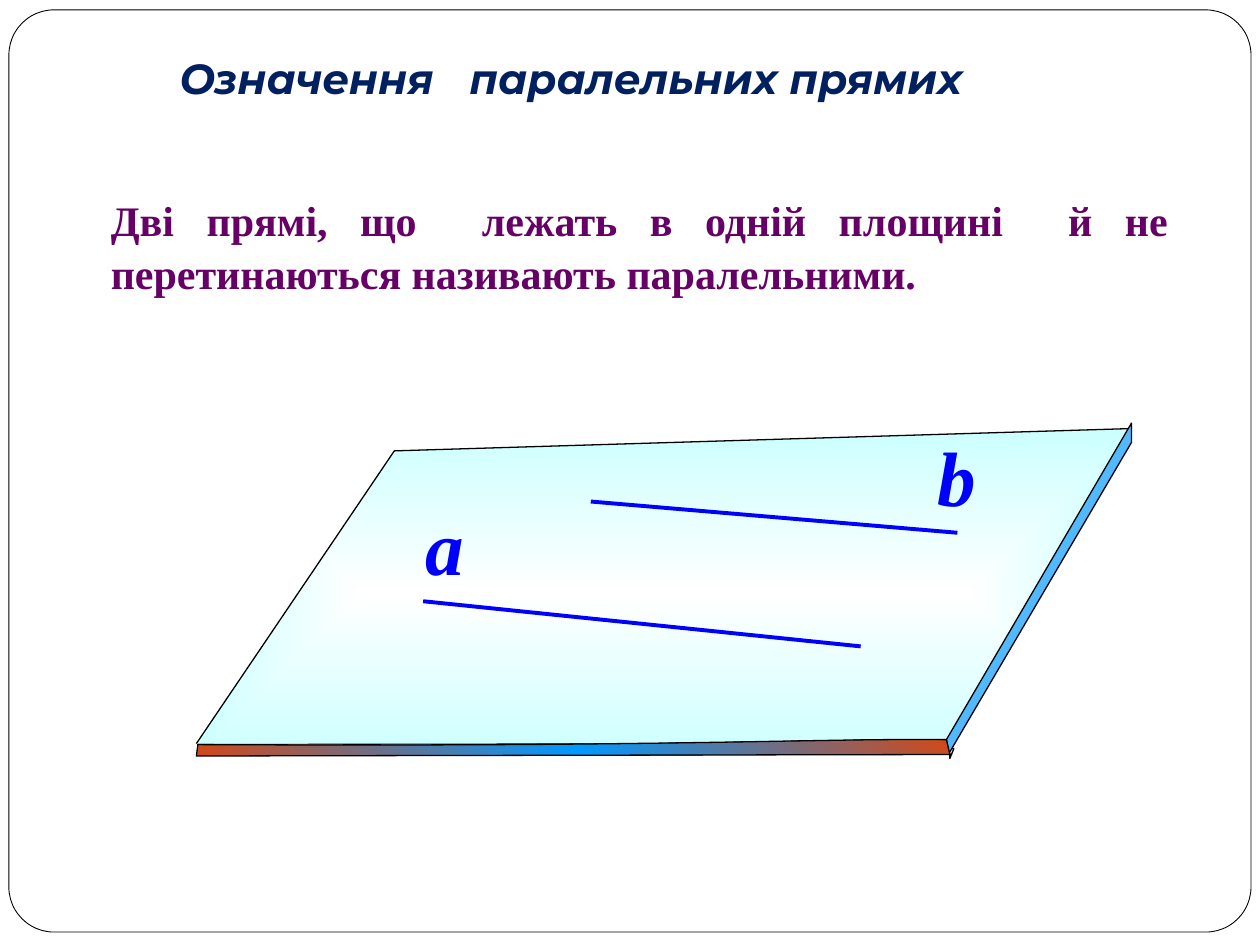
from dataclasses import dataclass

from lxml import etree
from pptx import Presentation
from pptx.dml.color import RGBColor
from pptx.enum import shapes, text
from pptx.oxml.ns import qn
from pptx.util import Cm, Pt

COLORS = {
    "white": "FFFFFF", "black": "000000", "title": "002060", "body": "660066",
    "line": "0000FF", "plane": "CCFFFF", "side": "53B9FF",
    "rust": "D34817", "azure": "0099FF",
}
Point = tuple[float, float]


@dataclass
class Style:
    font: str
    size: int
    color: str
    italic: bool = True


@dataclass
class Line:
    """A named straight line of the plane; all lengths in cm."""
    name: str
    start: Point
    end: Point
    label_box: tuple[float, float, float, float]


LINES = [
    Line("a", (17.35, 13.03), (8.53, 12.12), (8.33, 9.93, 1.32, 2.11)),
    Line("b", (19.3, 10.74), (11.91, 10.11), (18.64, 8.53, 1.32, 2.13)),
]
PLANE = [(3.96, 14.99), (7.95, 9.09), (22.81, 8.64), (19.08, 14.99), (3.99, 15.01),
         (3.99, 15.21), (19.15, 15.19), (19.15, 15.29), (19.23, 15.09), (19.15, 15.09),
         (22.76, 8.92), (19.15, 14.99), (3.99, 15.01)]
SIDE = [(22.81, 8.53), (22.81, 8.92), (19.13, 15.19), (19.08, 14.91)]
FRONT_CURVE = [(3.99, 15.01), (13.69, 15.06), (16.56, 14.88), (19.08, 14.91)]
FRONT_BOTTOM = [(19.15, 15.21), (3.96, 15.24)]


def rgb(name: str) -> RGBColor:
    return RGBColor.from_string(COLORS[name])


def bezier(ctrl: list[Point], steps: int = 16) -> list[Point]:
    """Points along a cubic curve."""
    points = []
    for i in range(steps + 1):
        t = i / steps
        weights = ((1 - t) ** 3, 3 * t * (1 - t) ** 2, 3 * t * t * (1 - t), t ** 3)
        points.append(tuple(sum(w * c[axis] for w, c in zip(weights, ctrl))
                            for axis in (0, 1)))
    return points


def outline(sp, width: float = 0.75) -> None:
    sp.shadow.inherit = False
    sp.line.color.rgb = rgb("black")
    sp.line.width = Pt(width)


def add_outline_shape(parent, points: list[Point], close: bool = True):
    (x, y), *rest = [(Cm(px), Cm(py)) for px, py in points]
    builder = parent.build_freeform(x, y)
    builder.add_line_segments(rest, close=close)
    sp = builder.convert_to_shape()
    outline(sp)
    return sp


def fill_gradient(sp, stops: list[tuple[int, str]], from_center: bool = False) -> None:
    sp.fill.gradient()
    grad = sp._element.spPr.find(qn("a:gradFill"))
    for child in list(grad):
        grad.remove(child)
    gs_list = etree.SubElement(grad, qn("a:gsLst"))
    for pos, color in stops:
        gs = etree.SubElement(gs_list, qn("a:gs"), pos=str(pos * 1000))
        etree.SubElement(gs, qn("a:srgbClr"), val=COLORS[color])
    if from_center:
        rect = etree.SubElement(grad, qn("a:path"), path="rect")
        etree.SubElement(rect, qn("a:fillToRect"),
                         **{side: "50000" for side in "ltrb"})
    else:
        etree.SubElement(grad, qn("a:lin"), ang="18900000", scaled="1")


def write(sp, words: str, style: Style, align=text.PP_ALIGN.LEFT, wrap: bool = True):
    tf = sp.text_frame
    tf.word_wrap = wrap
    tf.auto_size = text.MSO_AUTO_SIZE.SHAPE_TO_FIT_TEXT
    p = tf.paragraphs[0]
    p.alignment = align
    r = p.add_run()
    r.text = words
    f = r.font
    f.name, f.size, f.bold, f.italic = style.font, Pt(style.size), True, style.italic
    f.color.rgb = rgb(style.color)
    return p


def place(sp, left: float, top: float, width: float, height: float) -> None:
    sp.left, sp.top, sp.width, sp.height = Cm(left), Cm(top), Cm(width), Cm(height)


def add_named_line(s, line: Line) -> None:
    cx = s.shapes.add_connector(shapes.MSO_CONNECTOR.STRAIGHT,
                                *map(Cm, line.start + line.end))
    cx.line.color.rgb = rgb("line")
    cx.line.width = Pt(2.25)
    etree.SubElement(cx._element.spPr, qn("a:effectLst"))
    label = s.shapes.add_textbox(*map(Cm, line.label_box))
    write(label, line.name, Style("Times New Roman", 44, "line"))


def main() -> None:
    prs = Presentation()
    prs.slide_width, prs.slide_height = Cm(25.4), Cm(19.05)
    s = prs.slides.add_slide(prs.slide_layouts[1])

    # Rounded frame, behind everything
    frame = s.shapes.add_shape(shapes.MSO_SHAPE.ROUNDED_RECTANGLE,
                               Cm(0.18), Cm(0.2), Cm(25.04), Cm(18.59))
    frame.adjustments[0] = 0.049
    frame.fill.solid()
    frame.fill.fore_color.rgb = rgb("white")
    outline(frame, 0.5)
    s.shapes._spTree.insert(2, frame._element)

    # Title and definition
    title, body = s.shapes.title, s.placeholders[1]
    place(title, 1.78, 0.94, 19.46, 1.27)
    title.text_frame.vertical_anchor = text.MSO_ANCHOR.MIDDLE
    write(title, "Означення   паралельних прямих", Style("Montserrat", 24, "title"),
          text.PP_ALIGN.CENTER)
    place(body, 1.98, 3.76, 21.82, 2.31)
    p = write(body, "Дві прямі, що  лежать в одній площині  й не перетинаються "
              "називають паралельними.", Style("Times New Roman", 24, "body", False),
              text.PP_ALIGN.JUSTIFY)
    p.line_spacing, p.space_before = 1.04, Pt(2)
    p_pr = p._p.get_or_add_pPr()
    p_pr.set("marL", "0")
    p_pr.set("indent", "0")
    etree.SubElement(p_pr, qn("a:buNone"))

    # Plane with its side and front edges
    slab = s.shapes.add_group_shape().shapes
    plane = add_outline_shape(slab, PLANE, close=False)
    fill_gradient(plane, [(0, "white"), (100, "plane")], from_center=True)
    side = add_outline_shape(slab, SIDE)
    side.fill.solid()
    side.fill.fore_color.rgb = rgb("side")
    front = add_outline_shape(slab, bezier(FRONT_CURVE) + FRONT_BOTTOM)
    fill_gradient(front, [(0, "rust"), (50, "azure"), (100, "rust")])

    # Parallel lines
    for line in LINES:
        add_named_line(s, line)

    prs.save("out.pptx")


if __name__ == "__main__":
    main()
